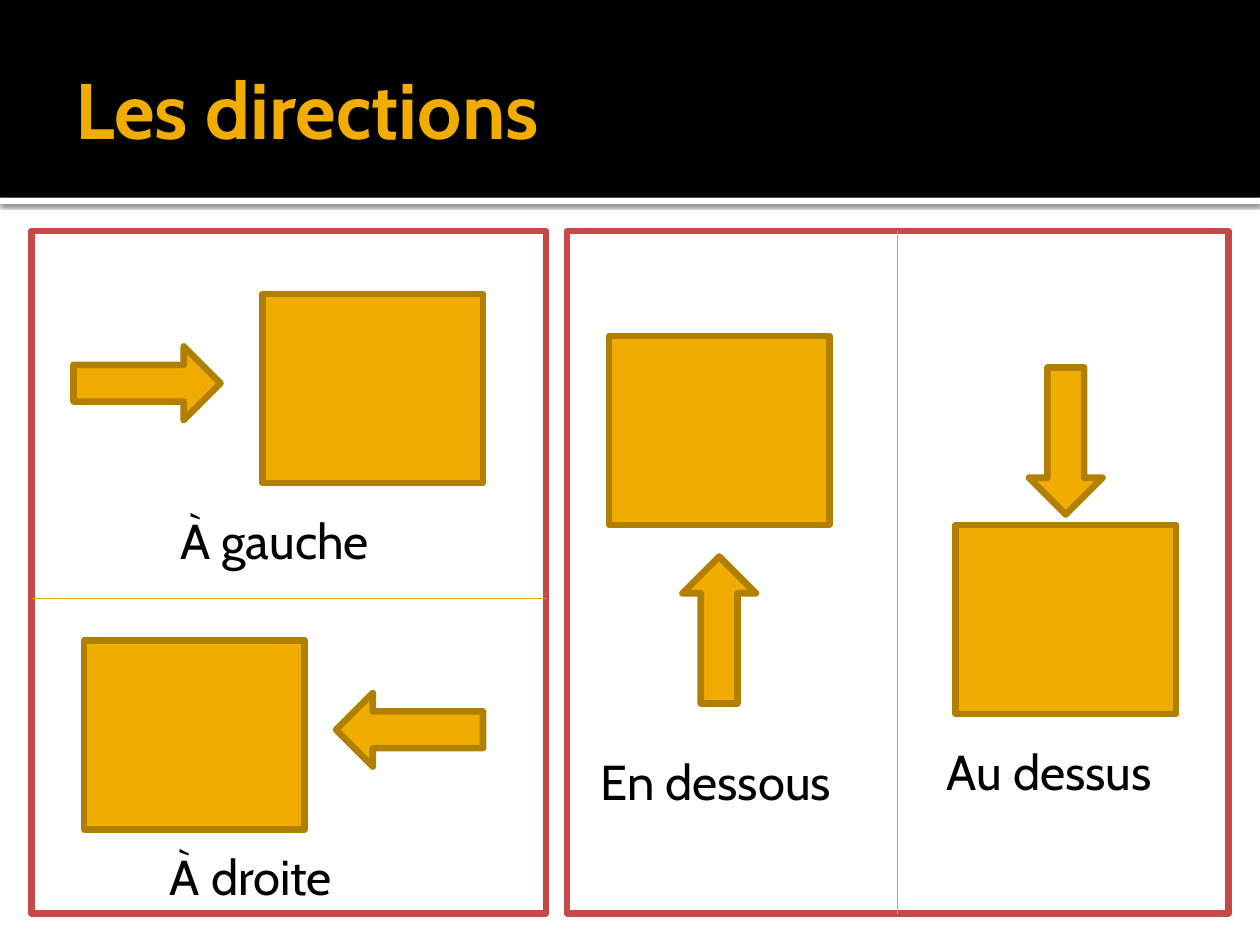
from lxml import etree
from pptx import Presentation
from pptx.dml.color import RGBColor
from pptx.enum.shapes import MSO_CONNECTOR, MSO_SHAPE
from pptx.enum.text import MSO_ANCHOR, MSO_AUTO_SIZE
from pptx.oxml import parse_xml
from pptx.oxml.ns import nsdecls, qn
from pptx.util import Pt

RECT, ARROW = MSO_SHAPE.RECTANGLE, MSO_SHAPE.RIGHT_ARROW
STRAIGHT = MSO_CONNECTOR.STRAIGHT
MIDDLE, GROW = MSO_ANCHOR.MIDDLE, MSO_AUTO_SIZE.SHAPE_TO_FIT_TEXT
COLORS = {"black": "000000", "white": "FFFFFF", "gold": "F0AD00",
          "edge": "B28000", "frame": "C64847", "divider": "EBA900"}
RGB = {name: RGBColor.from_string(value) for name, value in COLORS.items()}

prs = Presentation()
prs.slide_width, prs.slide_height = Pt(720), Pt(540)
s = prs.slides.add_slide(prs.slide_layouts[6])


def add_box(kind, x, y, w, h, fill=None, line=None, rotation=0):
    sp = s.shapes.add_shape(kind, Pt(x), Pt(y), Pt(w), Pt(h))
    sp.shadow.inherit = False
    sp.rotation = rotation
    if fill:
        sp.fill.solid()
        sp.fill.fore_color.rgb = RGB[fill]
    else:
        sp.fill.background()
    if line:
        sp.line.color.rgb = RGB[line]
        sp.line.width = Pt(3.78)
    else:
        sp.line.fill.background()
    return sp


def add_text(text, x, y, w, h, font, frame):
    tf = s.shapes.add_textbox(Pt(x), Pt(y), Pt(w), Pt(h)).text_frame
    for name, value in frame.items():
        setattr(tf, name, value)
    r = tf.paragraphs[0].add_run()
    r.text = text
    r.font.color.rgb = RGB[font["color"]]
    for name in ("name", "size", "bold"):
        setattr(r.font, name, font[name])


stripe = add_box(RECT, 0, 113, 720, 3.6, "white")
effects = stripe._element.spPr.find(qn("a:effectLst"))
effects.append(parse_xml(
    f'<a:outerShdw {nsdecls("a")} blurRad="{Pt(2.5)}" dist="{Pt(0.8)}" dir="5400000" '
    f'algn="tl" rotWithShape="0"><a:srgbClr val="{COLORS["black"]}">'
    '<a:alpha val="60000"/></a:srgbClr></a:outerShdw>'))
add_box(RECT, 0, 0, 720, 113, "black")
add_text("Les directions", 36, 12.3, 648, 98.5,
         {"name": "Cabin", "size": Pt(45), "bold": True, "color": "gold"},
         {"word_wrap": True, "vertical_anchor": MIDDLE, "margin_right": Pt(3.6)})

directions = [
    ("À gauche", (150, 168), (42, 198), 0, (96, 288)),
    ("À droite", (48, 366), (192, 396), 180, (90, 480)),
    ("En dessous", (348, 192), (369, 339), 270, (336, 426)),
    ("Au dessus", (546, 300), (567, 231), 90, (534, 420)),
]
for label, block, arrow, rotation, caption in directions:
    add_box(RECT, *block, 126, 108, "gold", "edge")
    add_box(ARROW, *arrow, 84, 42, "gold", "edge", rotation)
    add_text(label, *caption, 168, 41,
             {"name": "Cabin", "size": Pt(28), "bold": False, "color": "black"},
             {"word_wrap": True, "auto_size": GROW})

for x, w in [(18, 294), (324, 378)]:
    add_box(RECT, x, 132, w, 390, line="frame")

for ends in [(18, 342, 312, 342), (513, 132, 513, 522)]:
    divider = s.shapes.add_connector(STRAIGHT, *[Pt(v) for v in ends])
    divider.line.color.rgb = RGB["divider"]
    divider.line.width = Pt(0.5)
    etree.SubElement(divider._element.spPr, qn("a:effectLst"))

prs.save("out.pptx")
